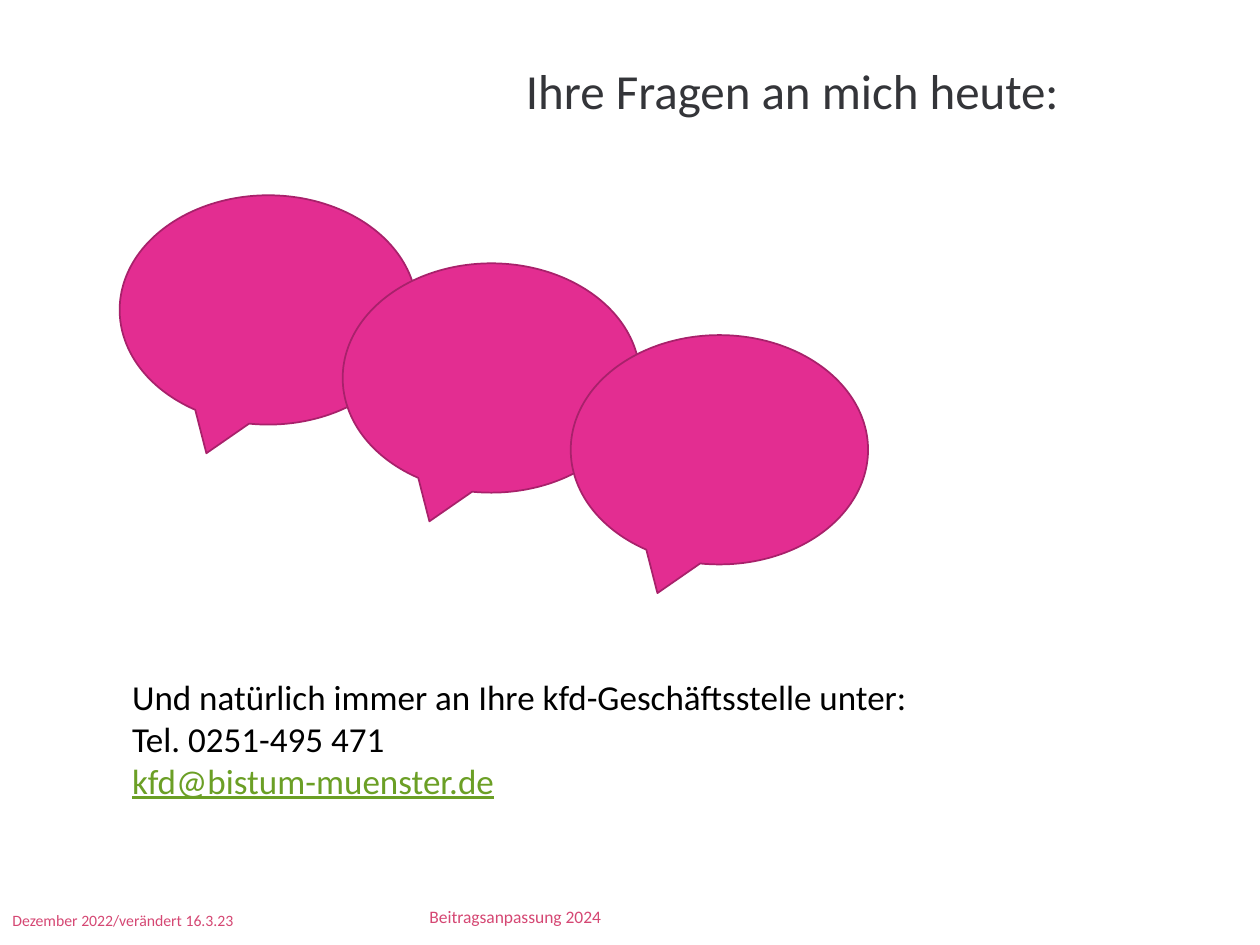
from dataclasses import dataclass

from pptx import Presentation
from pptx.dml.color import RGBColor
from pptx.enum.shapes import MSO_SHAPE
from pptx.enum.text import PP_ALIGN
from pptx.util import Inches, Pt

BUBBLE = MSO_SHAPE.OVAL_CALLOUT
LEFT, RIGHT = PP_ALIGN.LEFT, PP_ALIGN.RIGHT


@dataclass(frozen=True)
class Theme:
    font: str = "Calibri"
    pink: str = "E32D91"
    outline: str = "A8216B"
    footer: str = "D54773"
    title: str = "343539"
    body: str = "000000"
    link: str = "6B9F25"
    date_size: int = 9
    footer_size: int = 10
    title_size: int = 28
    body_size: int = 20


class Deck:
    """Draws styled elements on a slide grid of 100 columns by 75 rows."""

    def __init__(self, theme):
        self.theme = theme
        self.prs = Presentation()
        self.prs.slide_width, self.prs.slide_height = Inches(10), Inches(7.5)
        self.s = self.prs.slides.add_slide(self.prs.slide_layouts[6])

    def grid(self, col, row, cols, rows):
        w, h = self.prs.slide_width, self.prs.slide_height
        return (round(col * w / 100), round(row * h / 75),
                round(cols * w / 100), round(rows * h / 75))

    def text(self, cell, paragraphs, size, align=LEFT, wrap=True):
        tf = self.s.shapes.add_textbox(*self.grid(*cell)).text_frame
        tf.word_wrap = wrap
        for i, (words, color, underline) in enumerate(paragraphs):
            p = tf.add_paragraph() if i else tf.paragraphs[0]
            p.text, p.alignment = words, align
            style = {"name": self.theme.font, "size": Pt(size), "underline": underline}
            for r in p.runs:
                for key, value in style.items():
                    setattr(r.font, key, value)
                r.font.color.rgb = RGBColor.from_string(color)

    def bubble(self, cell):
        sp = self.s.shapes.add_shape(BUBBLE, *self.grid(*cell))
        sp.shadow.inherit = False
        sp.fill.solid()
        sp.fill.fore_color.rgb = RGBColor.from_string(self.theme.pink)
        sp.line.color.rgb = RGBColor.from_string(self.theme.outline)
        sp.line.width = Pt(1)


def main():
    t = Theme()
    deck = Deck(t)
    deck.text((0, 71.8, 22.5, 4),
              [("Dezember 2022/verändert 16.3.23", t.footer, None)], t.date_size)
    deck.text((33.1, 71.4, 33.8, 4),
              [("Beitragsanpassung 2024", t.footer, None)], t.footer_size)
    deck.text((40.7, 4.3, 44.3, 5.7),
              [("Ihre Fragen an mich heute:", t.title, None)], t.title_size, RIGHT, False)
    for col, row in ((9.5, 15.5), (27.2, 20.9), (45.3, 26.6)):
        deck.bubble((col, row, 23.6, 18.2))
    deck.text((9.5, 53.1, 86, 11.1), [
        ("Und natürlich immer an Ihre kfd-Geschäftsstelle unter:\vTel. 0251-495 471",
         t.body, None),
        ("kfd@bistum-muenster.de", t.link, True),
    ], t.body_size)
    deck.prs.save("out.pptx")


if __name__ == "__main__":
    main()
